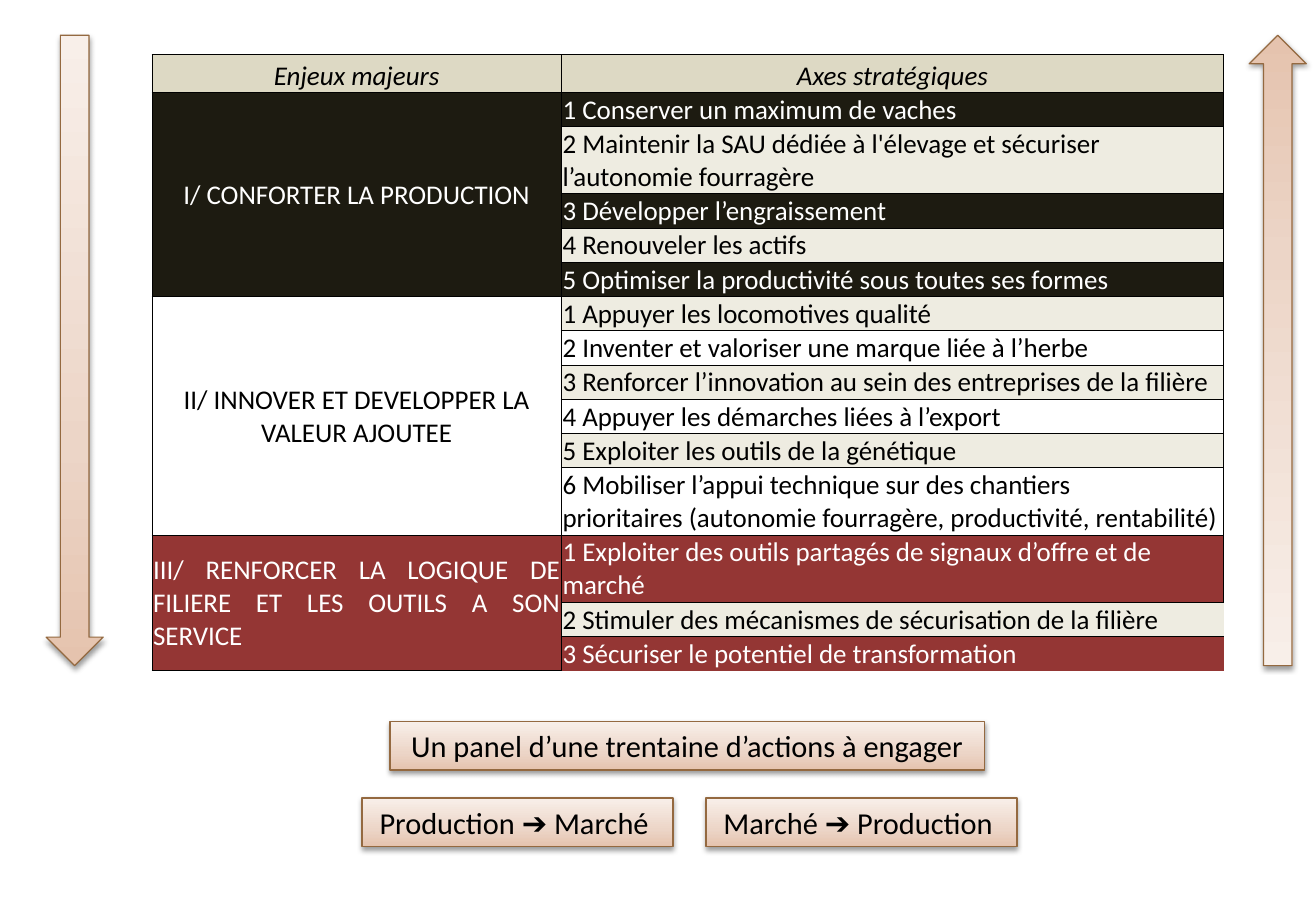
import pptx
import pptx.util
import pptx.dml.color
import pptx.enum.shapes
import pptx.enum.text
import pptx.oxml
import pptx.oxml.ns

Inches = pptx.util.Inches
Pt = pptx.util.Pt
ALIGN = pptx.enum.text.PP_ALIGN
ANCHOR = pptx.enum.text.MSO_ANCHOR
SHAPE = pptx.enum.shapes.MSO_SHAPE
NAMESPACE = pptx.oxml.ns.nsdecls("a")
HARD_SPACE = chr(160)

COLORS = {
    "black": "000000",
    "white": "FFFFFF",
    "header": "DDD9C4",
    "beige": "EEECE1",
    "dark": "1D1B11",
    "red": "943634",
    "outline": "946940",
    "peach": "E5C3AE",
    "peach_mid": "ECD5C7",
    "peach_light": "F8EFE9",
}
PEACH_STOPS = [(0, "peach"), (35, "peach_mid"), (100, "peach_light")]

HEADINGS = ["Enjeux majeurs", "Axes stratégiques"]
ISSUES = [
    {
        "title": "I/ CONFORTER LA PRODUCTION",
        "fill": "dark", "text": "white", "align": ALIGN.CENTER,
        "beige_parity": 0, "justified": (),
        "axes": [
            "1 Conserver un maximum de vaches",
            "2 Maintenir la SAU dédiée à l'élevage et sécuriser l’autonomie fourragère",
            "3 Développer l’engraissement",
            "4 Renouveler les actifs",
            "5 Optimiser la productivité sous toutes ses formes",
        ],
    },
    {
        "title": "II/ INNOVER ET DEVELOPPER LA VALEUR AJOUTEE",
        "fill": "white", "text": "black", "align": ALIGN.CENTER,
        "beige_parity": 1, "justified": (2, 3),
        "axes": [
            "1 Appuyer les locomotives qualité",
            "2 Inventer et valoriser une marque liée à l’herbe",
            "3 Renforcer l’innovation au sein des entreprises de la filière",
            "4 Appuyer les démarches liées à l’export",
            "5 Exploiter les outils de la génétique",
            "6 Mobiliser l’appui technique sur des chantiers "
            f"prioritaires{HARD_SPACE}(autonomie fourragère, productivité, rentabilité)",
        ],
    },
    {
        "title": "III/ RENFORCER LA LOGIQUE DE FILIERE ET LES OUTILS A SON SERVICE",
        "fill": "red", "text": "white", "align": ALIGN.JUSTIFY,
        "beige_parity": 0, "justified": (2,),
        "axes": [
            "1 Exploiter des outils partagés de signaux d’offre et de marché",
            "2 Stimuler des mécanismes de sécurisation de la filière ",
            "3 Sécuriser le potentiel de transformation",
        ],
    },
]
HEADER_HEIGHT, AXIS_HEIGHT = 0.31, 0.28


def rgb(color):
    return pptx.dml.color.RGBColor.from_string(COLORS[color])


def write(frame, text, size, color, align, italic=False):
    paragraph = frame.paragraphs[0]
    paragraph.alignment = align
    run = paragraph.add_run()
    run.text = text
    run.font.name = "Calibri"
    run.font.size = Pt(size)
    run.font.italic = italic
    run.font.color.rgb = rgb(color)


def set_borders(cell, sides):
    properties = cell._tc.get_or_add_tcPr()
    for position, side in enumerate("LRTB"):
        paint = (f'<a:solidFill><a:srgbClr val="{COLORS["black"]}"/></a:solidFill>'
                 if side in sides else "<a:noFill/>")
        properties.insert(position, pptx.oxml.parse_xml(
            f'<a:ln{side} {NAMESPACE} w="{Pt(0.5)}">{paint}</a:ln{side}>'))


def format_cell(cell, fill, anchor=ANCHOR.MIDDLE, sides="LRTB"):
    cell.margin_left = cell.margin_right = cell.margin_top = Inches(0.01)
    cell.margin_bottom = 0
    cell.vertical_anchor = anchor
    cell.fill.solid()
    cell.fill.fore_color.rgb = rgb(fill)
    set_borders(cell, sides)


def add_strategy_table(slide, left, top, issue_width, axis_width):
    axis_count = sum(len(issue["axes"]) for issue in ISSUES)
    strategy = slide.shapes.add_table(
        axis_count + 1, 2, Inches(left), Inches(top),
        Inches(issue_width + axis_width), Inches(4.99)).table
    strategy.first_row = strategy.horz_banding = False
    strategy.columns[0].width = Inches(issue_width)
    strategy.columns[1].width = Inches(axis_width)
    strategy.rows[0].height = Inches(HEADER_HEIGHT)
    for column, heading in enumerate(HEADINGS):
        cell = strategy.cell(0, column)
        format_cell(cell, "header", ANCHOR.BOTTOM)
        write(cell.text_frame, heading, 16, "black", ALIGN.CENTER, True)

    open_sides = {axis_count - 1: "LTB", axis_count: "LT"}
    row = 1
    for issue in ISSUES:
        first_row = row
        for number, axis in enumerate(issue["axes"], 1):
            strategy.rows[row].height = Inches(AXIS_HEIGHT)
            beige = number % 2 == issue["beige_parity"]
            format_cell(strategy.cell(row, 0), issue["fill"])
            cell = strategy.cell(row, 1)
            format_cell(cell, "beige" if beige else issue["fill"],
                        sides=open_sides.get(row, "LRTB"))
            write(cell.text_frame, axis, 16, "black" if beige else issue["text"],
                  ALIGN.JUSTIFY if number in issue["justified"] else ALIGN.LEFT)
            row += 1
        issue_cell = strategy.cell(first_row, 0)
        issue_cell.merge(strategy.cell(row - 1, 0))
        write(issue_cell.text_frame, issue["title"], 16, issue["text"], issue["align"])


def add_peach_shape(slide, preset, left, top, width, height):
    shape = slide.shapes.add_shape(
        preset, Inches(left), Inches(top), Inches(width), Inches(height))
    shape.line.color.rgb = rgb("outline")
    shape.line.width = Pt(0.75)
    stops = "".join(
        f'<a:gs pos="{percent * 1000}"><a:srgbClr val="{COLORS[color]}"/></a:gs>'
        for percent, color in PEACH_STOPS)
    properties = shape._element.spPr
    properties.insert(2, pptx.oxml.parse_xml(
        f'<a:gradFill {NAMESPACE} rotWithShape="1"><a:gsLst>{stops}</a:gsLst>'
        '<a:lin ang="16200000" scaled="0"/></a:gradFill>'))
    shape.shadow.inherit = False
    properties.find(pptx.oxml.ns.qn("a:effectLst")).append(pptx.oxml.parse_xml(
        f'<a:outerShdw {NAMESPACE} blurRad="{Pt(3.1)}" dist="{Pt(1.6)}" dir="5400000" '
        f'rotWithShape="0"><a:srgbClr val="{COLORS["black"]}">'
        '<a:alpha val="38000"/></a:srgbClr></a:outerShdw>'))
    return shape


def add_side_arrow(slide, left, top, width, height, rotation):
    arrow = add_peach_shape(slide, SHAPE.DOWN_ARROW, left, top, width, height)
    arrow.rotation = rotation


def add_message(slide, text, left, top, width, height):
    message = add_peach_shape(slide, SHAPE.RECTANGLE, left, top, width, height)
    frame = message.text_frame
    frame.word_wrap = False
    frame.auto_size = pptx.enum.text.MSO_AUTO_SIZE.SHAPE_TO_FIT_TEXT
    write(frame, text, 18, "black", ALIGN.CENTER)


def main():
    deck = pptx.Presentation()
    deck.slide_width, deck.slide_height = Inches(10.83), Inches(7.5)
    slide = deck.slides.add_slide(deck.slide_layouts[6])
    add_strategy_table(slide, 1.25, 0.45, 3.37, 5.45)
    add_message(slide, "Un panel d’une trentaine d’actions à engager", 3.21, 5.94, 4.89, 0.4)
    for left, rotation in [(10.28, 180), (0.38, 0)]:
        add_side_arrow(slide, left, 0.29, 0.47, 5.19, rotation)
    for left, text in [(2.98, "Production ➔ Marché "), (5.81, "Marché ➔ Production ")]:
        add_message(slide, text, left, 6.57, 2.56, 0.4)
    deck.save("out.pptx")


if __name__ == "__main__":
    main()
